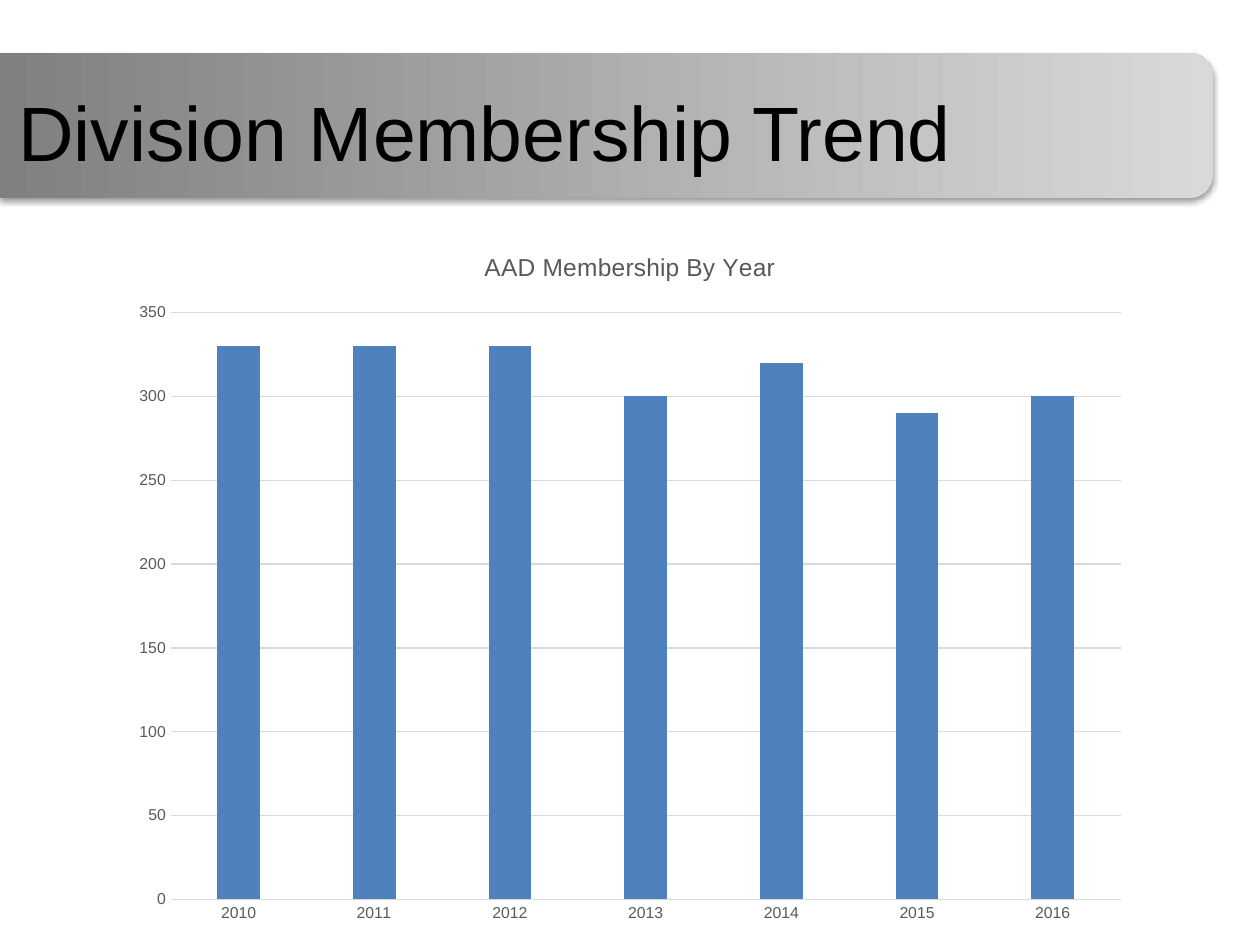
from dataclasses import dataclass

from lxml.etree import SubElement
from pptx import Presentation
from pptx.chart.data import CategoryChartData as ChartData
from pptx.dml.color import RGBColor as Color
from pptx.enum.chart import XL_CHART_TYPE as ChartType, XL_TICK_MARK as Tick
from pptx.enum.shapes import MSO_AUTO_SHAPE_TYPE as Preset
from pptx.enum.text import MSO_ANCHOR as Anchor, PP_ALIGN as Align
from pptx.oxml.ns import qn
from pptx.util import Emu, Pt

PX_PER_INCH = 126


def px(*lengths):
    """Turn px lengths into a list of EMU lengths."""
    return [Emu(round(length * 914400 / PX_PER_INCH)) for length in lengths]


@dataclass(frozen=True)
class Theme:
    """Hold the colours, font and type sizes of the slide."""
    font: str = "Arial"
    black: str = "000000"
    label: str = "595959"
    grid: str = "D9D9D9"
    bar: str = "4F81BD"
    banner_start: str = "808080"
    banner_end: str = "D9D9D9"
    title_size: int = 44
    chart_title_size: int = 14
    chart_size: int = 10
    axis_size: int = 9
    line_width: float = 0.75


def style_font(font, name, size, color):
    """Apply one plain style to a font."""
    font.name, font.size, font.bold = name, Pt(size), False
    font.color.rgb = Color.from_string(color)


def write_text(frame, text, *, font, size, color, align=Align.LEFT):
    """Write one formatted paragraph into a text frame."""
    paragraph = frame.paragraphs[0]
    paragraph.alignment = align
    run = paragraph.add_run()
    run.text = text
    style_font(run.font, font, size, color)


class SlideBuilder:
    """Draw styled elements on the current slide."""

    def __init__(self, slide, theme):
        """Keep the slide and its theme."""
        self.slide, self.theme = slide, theme

    def banner(self, left, top, width, height):
        """Add a gradient bar whose right-hand corners are rounded."""
        offset = (width - height) // 2
        shape = self.slide.shapes.add_shape(
            Preset.ROUND_2_SAME_RECTANGLE,
            *px(left + offset, top - offset, height, width))
        shape.rotation = 90
        shape.line.fill.background()
        shape.fill.gradient()
        shape.fill.gradient_angle = 0
        colors = self.theme.banner_start, self.theme.banner_end
        for stop, color in zip(shape.fill.gradient_stops, colors):
            stop.color.rgb = Color.from_string(color)
        properties = shape._element.spPr
        properties.find(qn("a:gradFill")).set("rotWithShape", "0")
        shape.shadow.inherit = False
        shadow = SubElement(
            properties.find(qn("a:effectLst")), qn("a:outerShdw"),
            blurRad="40000", dist="20000", dir="5400000", rotWithShape="0")
        color = SubElement(shadow, qn("a:srgbClr"), val=self.theme.black)
        SubElement(color, qn("a:alpha"), val="38000")

    def title(self, text, left, top, width, height):
        """Add the slide title."""
        box = self.slide.shapes.add_textbox(*px(left, top, width, height))
        frame = box.text_frame
        frame.word_wrap = True
        frame.vertical_anchor = Anchor.TOP
        write_text(frame, text, font=self.theme.font, align=Align.CENTER,
                   size=self.theme.title_size, color=self.theme.black)

    def grid_line(self, line):
        """Give an axis or grid line the light style."""
        line.color.rgb = Color.from_string(self.theme.grid)
        line.width = Pt(self.theme.line_width)

    def column_chart(self, title, values, left, top, width, height):
        """Add a column chart of values keyed by category."""
        theme = self.theme
        data = ChartData()
        data.categories = list(values)
        data.add_series("Series 1", list(values.values()))
        chart = self.slide.shapes.add_chart(
            ChartType.COLUMN_CLUSTERED,
            *px(left, top, width, height), data).chart
        style_font(chart.font, theme.font, theme.chart_size, theme.black)
        chart.has_legend = False
        chart.has_title = True
        chart.chart_title.include_in_layout = False
        write_text(chart.chart_title.text_frame, title, font=theme.font,
                   size=theme.chart_title_size, color=theme.label,
                   align=Align.CENTER)
        plot = chart.plots[0]
        plot.gap_width, plot.overlap = 219, -27
        plot.vary_by_categories = False
        fill = plot.series[0].format.fill
        fill.solid()
        fill.fore_color.rgb = Color.from_string(theme.bar)
        category, value = chart.category_axis, chart.value_axis
        for axis in (category, value):
            axis.major_tick_mark = axis.minor_tick_mark = Tick.NONE
            style_font(axis.tick_labels.font, theme.font, theme.axis_size,
                       theme.label)
        self.grid_line(category.format.line)
        value.format.line.fill.background()
        value.has_major_gridlines = True
        self.grid_line(value.major_gridlines.format.line)
        value.minimum_scale, value.maximum_scale = 0, 350
        value.major_unit = 50


def main():
    """Build and save the membership slide."""
    presentation = Presentation()
    presentation.slide_width, presentation.slide_height = px(1260, 945)
    slide = presentation.slides.add_slide(presentation.slide_layouts[6])
    builder = SlideBuilder(slide, Theme())
    members = {"2010": 330, "2011": 330, "2012": 330, "2013": 300,
               "2014": 320, "2015": 290, "2016": 300}
    builder.banner(0, 53, 1213, 145)
    builder.title("Division Membership Trend", 0, 78, 970, 125)
    builder.column_chart("AAD Membership By Year", members,
                         119, 226, 1022, 711)
    presentation.save("out.pptx")


if __name__ == "__main__":
    main()
